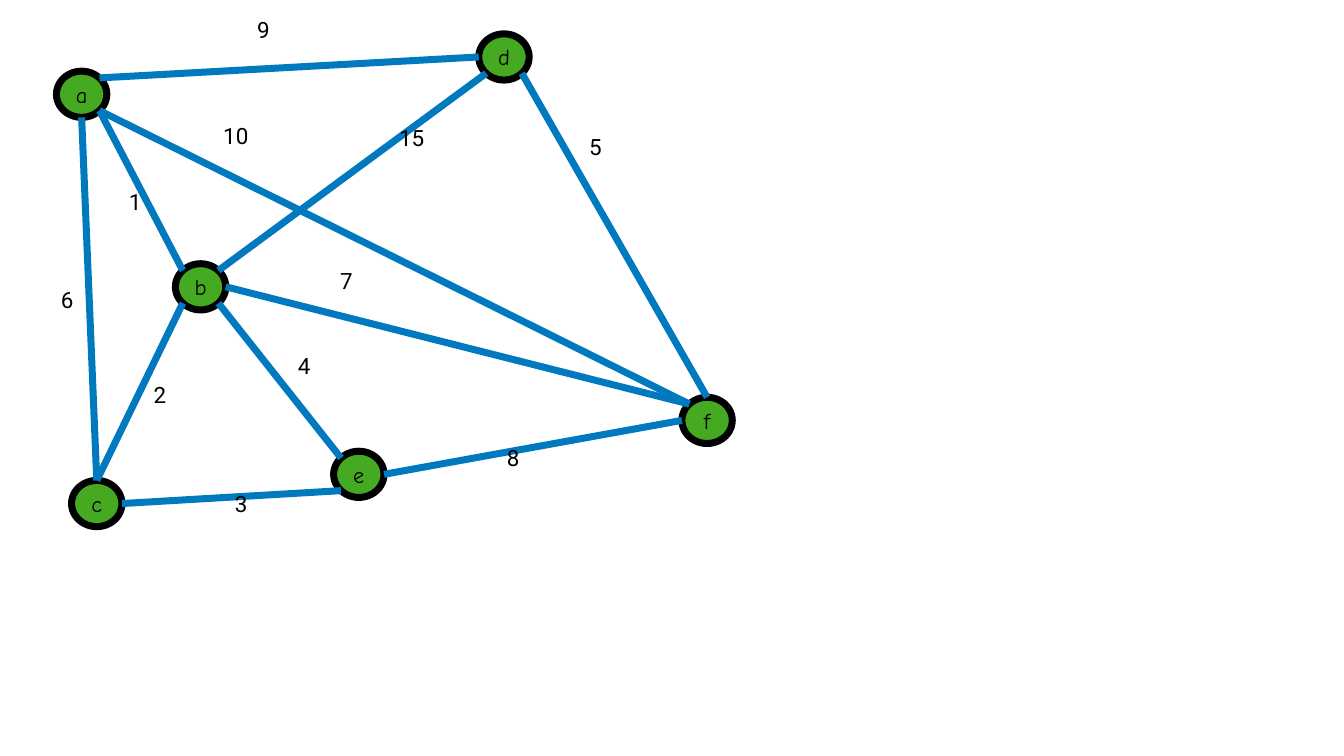
from dataclasses import dataclass
from math import cos, radians, sin

from pptx import Presentation
from pptx.dml.color import RGBColor
from pptx.enum.shapes import MSO_CONNECTOR, MSO_SHAPE
from pptx.enum.text import MSO_ANCHOR, MSO_AUTO_SIZE, PP_ALIGN
from pptx.oxml.ns import qn
from pptx.shapes.autoshape import Shape
from pptx.slide import Slide
from pptx.util import Inches, Pt

ELLIPSE = MSO_SHAPE.OVAL
STRAIGHT = MSO_CONNECTOR.STRAIGHT
MIDDLE = MSO_ANCHOR.MIDDLE
GROW = MSO_AUTO_SIZE.SHAPE_TO_FIT_TEXT
LEFT, CENTER = PP_ALIGN.LEFT, PP_ALIGN.CENTER

SLIDE_WIDTH, SLIDE_HEIGHT = Inches(26.67), Inches(15)
COLUMNS = 160  # square grid cells across the slide
CELL = SLIDE_WIDTH / COLUMNS

NODE_WIDTH, NODE_HEIGHT = 6, 5.5
LABEL_HEIGHT = 7.4
LABEL_WIDTHS = {1: 3.25, 2: 4.2}  # by number of digits
LINE_WIDTH = 10
TEXT_SIZE = 32
GREEN, BLUE, BLACK = "45AA21", "0079BF", "000000"

# Clockwise angles of the ellipse's connection points
ANGLES = {"E": 0, "SE": 45, "S": 90, "SW": 135, "W": 180, "NW": 225, "N": 270, "NE": 315}


@dataclass(frozen=True)
class Node:
    name: str
    column: float  # centre
    row: float


@dataclass(frozen=True)
class Edge:
    start: str
    start_side: str
    end: str
    end_side: str


@dataclass(frozen=True)
class Weight:
    value: int
    column: float  # top left corner
    row: float


NODES = [
    Node("a", 9.72, 11.22),
    Node("d", 60, 6.78),
    Node("b", 23.88, 34.14),
    Node("c", 11.52, 59.94),
    Node("e", 42.72, 56.46),
    Node("f", 84.18, 50.04),
]
EDGES = [
    Edge("f", "N", "d", "SE"),
    Edge("f", "NW", "a", "SE"),
    Edge("d", "SW", "b", "NE"),
    Edge("c", "N", "b", "SW"),
    Edge("e", "NW", "b", "SE"),
    Edge("f", "W", "e", "E"),
    Edge("b", "NW", "a", "SE"),
    Edge("d", "W", "a", "NE"),
    Edge("c", "N", "a", "S"),
    Edge("c", "E", "e", "SW"),
    Edge("f", "NW", "b", "E"),
]
WEIGHTS = [
    Weight(9, 30.24, 0),
    Weight(6, 6.9, 32.1),
    Weight(10, 26.22, 12.6),
    Weight(5, 69.78, 13.92),
    Weight(1, 15, 20.46),
    Weight(3, 27.6, 56.46),
    Weight(4, 35.1, 39.96),
    Weight(2, 17.94, 43.44),
    Weight(7, 40.14, 29.94),
    Weight(8, 60, 51),
    Weight(15, 47.16, 12.9),
]


def color(value: str) -> RGBColor:
    return RGBColor.from_string(value)


def cells(*counts: float) -> list[int]:
    return [round(count * CELL) for count in counts]


def write(shape: Shape, text: str, font_name: str, alignment: PP_ALIGN) -> None:
    frame = shape.text_frame
    frame.text = text
    frame.word_wrap = True
    frame.auto_size = GROW
    frame.vertical_anchor = MIDDLE
    frame.margin_left = frame.margin_right = Inches(0.06)
    frame.margin_top = frame.margin_bottom = Inches(0.06)
    paragraph = frame.paragraphs[0]
    paragraph.alignment = alignment
    font = paragraph.runs[0].font
    font.name, font.size = font_name, Pt(TEXT_SIZE)
    font.color.rgb = color(BLACK)


def draw_node(slide: Slide, node: Node) -> Shape:
    left, top = node.column - NODE_WIDTH / 2, node.row - NODE_HEIGHT / 2
    shape = slide.shapes.add_shape(ELLIPSE, *cells(left, top, NODE_WIDTH, NODE_HEIGHT))
    shape.shadow.inherit = False
    shape.fill.solid()
    shape.fill.fore_color.rgb = color(GREEN)
    shape.line.color.rgb = color(BLACK)
    shape.line.width = Pt(LINE_WIDTH)
    write(shape, node.name, "Comic Neue", CENTER)
    return shape


def rim_point(shape: Shape, side: str) -> tuple[int, int]:
    angle = radians(ANGLES[side])
    return (
        round(shape.left + shape.width / 2 * (1 + cos(angle))),
        round(shape.top + shape.height / 2 * (1 + sin(angle))),
    )


def draw_edge(slide: Slide, edge: Edge, circles: dict[str, Shape]) -> None:
    start, end = circles[edge.start], circles[edge.end]
    connector = slide.shapes.add_connector(
        STRAIGHT, *rim_point(start, edge.start_side), *rim_point(end, edge.end_side)
    )
    if edge.start_side == "N":
        connector.begin_connect(start, 0)
    connector.line.color.rgb = color(BLUE)
    connector.line.width = Pt(LINE_WIDTH)
    properties = connector._element.spPr
    properties.append(properties.makeelement(qn("a:effectLst"), {}))


def draw_weight(slide: Slide, weight: Weight) -> None:
    text = str(weight.value)
    box = slide.shapes.add_textbox(
        *cells(weight.column, weight.row, LABEL_WIDTHS[len(text)], LABEL_HEIGHT)
    )
    write(box, text, "Roboto", LEFT)
    paragraph = box.text_frame.paragraphs[0]
    paragraph.line_spacing = 0.9
    paragraph.space_before = Pt(45)


def main() -> None:
    presentation = Presentation()
    presentation.slide_width, presentation.slide_height = SLIDE_WIDTH, SLIDE_HEIGHT
    slide = presentation.slides.add_slide(presentation.slide_layouts[6])

    # Graph nodes, the edges between them, and the edge weights
    circles = {node.name: draw_node(slide, node) for node in NODES}
    for edge in EDGES:
        draw_edge(slide, edge, circles)
    for weight in WEIGHTS:
        draw_weight(slide, weight)

    presentation.save("out.pptx")


if __name__ == "__main__":
    main()
